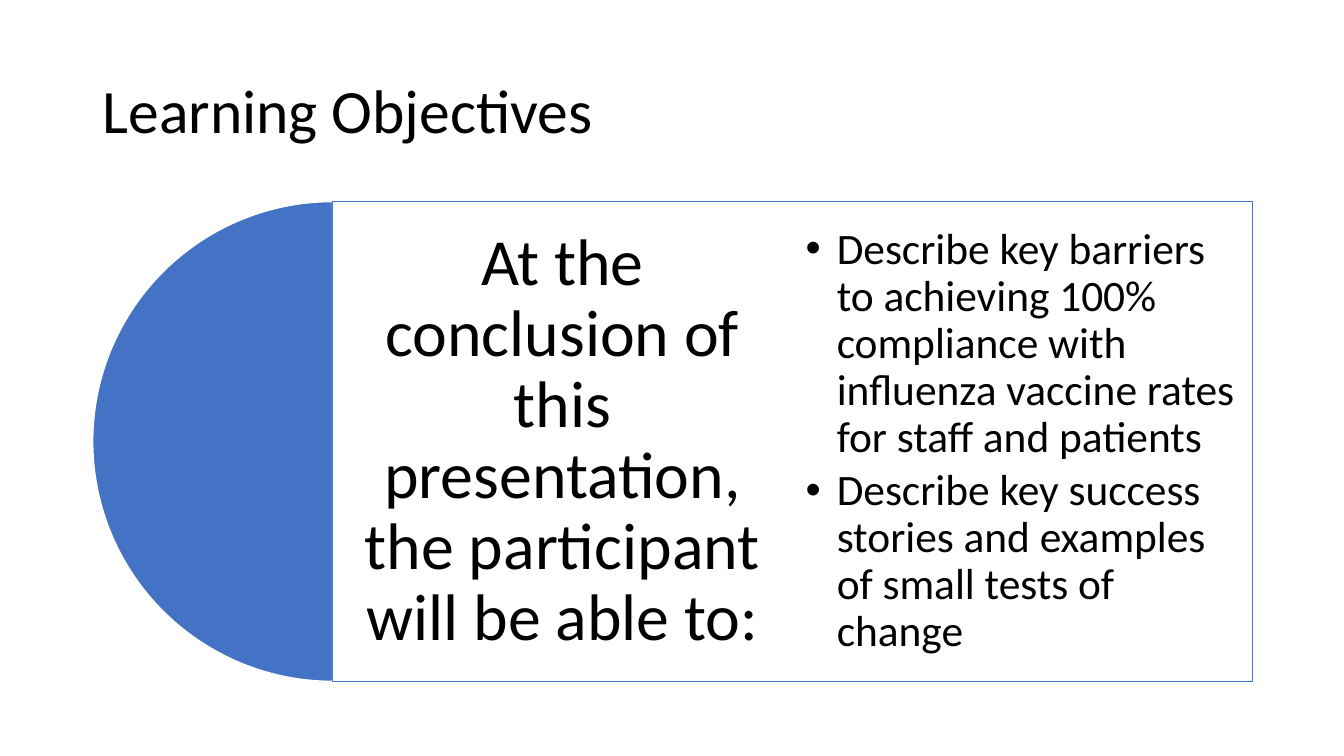
from lxml import etree
from pptx import Presentation
from pptx.dml.color import RGBColor
from pptx.enum.shapes import MSO_SHAPE
from pptx.enum.text import MSO_ANCHOR, PP_ALIGN
from pptx.oxml.ns import qn
from pptx.util import Inches, Pt

PIE, RECTANGLE = MSO_SHAPE.PIE, MSO_SHAPE.RECTANGLE
MIDDLE = MSO_ANCHOR.MIDDLE
LEFT, CENTER = PP_ALIGN.LEFT, PP_ALIGN.CENTER

BLACK = RGBColor(0x00, 0x00, 0x00)
WHITE = RGBColor(0xFF, 0xFF, 0xFF)
BLUE = RGBColor(0x44, 0x72, 0xC4)
FONT = "Calibri"

PANEL_TOP, DIAMETER = 2, 4.76
PIE_LEFT = 0.92
PANEL_LEFT = PIE_LEFT + DIAMETER / 2
COLUMN_WIDTH = 4.56


def add_block(s, kind, box, fill, line):
    shape = s.shapes.add_shape(kind, *map(Inches, box))
    shape.shadow.inherit = False
    shape.fill.solid()
    shape.fill.fore_color.rgb = fill
    shape.line.color.rgb = line
    shape.line.width = Pt(1)
    return shape


def set_opacity(shape, percent):
    color = shape.fill._xPr.find(qn("a:solidFill"))[0]
    etree.SubElement(color, qn("a:alpha")).set("val", str(percent * 1000))


def add_bullet(p, indent):
    pPr = p._p.get_or_add_pPr()
    pPr.set("marL", str(Inches(indent)))
    pPr.set("indent", str(-Inches(indent)))
    etree.SubElement(pPr, qn("a:buFont")).set("typeface", "Arial")
    etree.SubElement(pPr, qn("a:buChar")).set("char", "•")


def add_text(s, box, texts, size, align=LEFT, inset=None, after=0, bullet=None):
    tf = s.shapes.add_textbox(*map(Inches, box)).text_frame
    tf.word_wrap = True
    tf.vertical_anchor = MIDDLE
    if inset is not None:
        for side in ("left", "top", "right", "bottom"):
            setattr(tf, f"margin_{side}", Inches(inset))
    for i, text in enumerate(texts):
        p = tf.paragraphs[0] if i == 0 else tf.add_paragraph()
        if bullet is not None:
            add_bullet(p, bullet)
        p.alignment = align
        p.line_spacing = 0.9
        p.space_after = Pt(after)
        r = p.add_run()
        r.text = text
        r.font.name = FONT
        r.font.size = Pt(size)
        r.font.color.rgb = BLACK


def main():
    prs = Presentation()
    prs.slide_width, prs.slide_height = Inches(13.33), Inches(7.5)
    s = prs.slides.add_slide(prs.slide_layouts[6])

    # Title
    add_text(s, (PIE_LEFT, 0.4, 11.5, 1.45), ["Learning Objectives"], 44)

    # Half circle and panel
    pie = add_block(s, PIE, (PIE_LEFT, PANEL_TOP, DIAMETER, DIAMETER), BLUE, WHITE)
    pie.adjustments[0], pie.adjustments[1] = 54, 162  # 90 to 270 degrees
    panel = add_block(s, RECTANGLE,
                      (PANEL_LEFT, PANEL_TOP, 2 * COLUMN_WIDTH, DIAMETER), WHITE, BLUE)
    set_opacity(panel, 90)

    # Lead-in and objectives
    add_text(s, (PANEL_LEFT, PANEL_TOP, COLUMN_WIDTH, DIAMETER),
             ["At the conclusion of this presentation, the participant will be able to:"],
             47, align=CENTER, inset=0.2, after=16.5)
    add_text(s, (PANEL_LEFT + COLUMN_WIDTH, PANEL_TOP, COLUMN_WIDTH, DIAMETER),
             ["Describe key barriers to achieving 100% compliance with influenza "
              "vaccine rates for staff and patients",
              "Describe key success stories and examples of small tests of change"],
             31, inset=0.13, after=4.7, bullet=0.31)

    prs.save("out.pptx")


if __name__ == "__main__":
    main()
